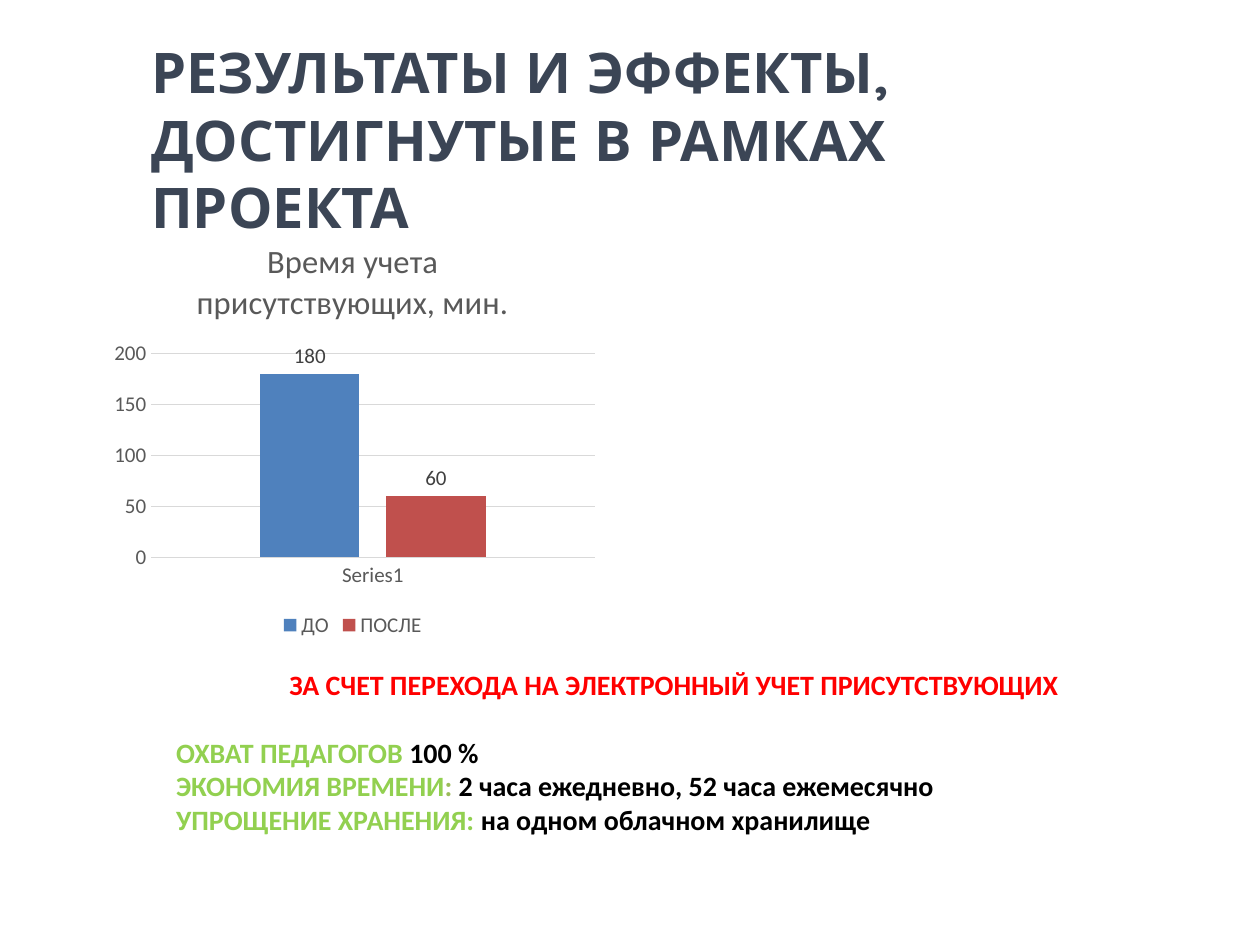
from lxml import etree
from pptx import Presentation
from pptx.chart.data import CategoryChartData
from pptx.dml.color import RGBColor
from pptx.enum.chart import XL_CHART_TYPE, XL_LABEL_POSITION, XL_LEGEND_POSITION, XL_TICK_MARK
from pptx.enum.text import PP_ALIGN
from pptx.oxml.ns import qn
from pptx.util import Inches, Pt

COLUMN_CLUSTERED = XL_CHART_TYPE.COLUMN_CLUSTERED
OUTSIDE_END = XL_LABEL_POSITION.OUTSIDE_END
BOTTOM = XL_LEGEND_POSITION.BOTTOM
NO_TICK = XL_TICK_MARK.NONE
CENTER, JUSTIFY = PP_ALIGN.CENTER, PP_ALIGN.JUSTIFY

WIDTH, HEIGHT = Inches(10), Inches(7.5)
BODY_FONT, TITLE_FONT = "Calibri", "Quicksand"
COLORS = {
    "title": "3B4555", "accent": "FF0000", "label": "92D050", "colon": "9BBB59",
    "text": "000000", "axis": "595959", "data_label": "404040", "grid": "D9D9D9",
    "before": "4F81BD", "after": "C0504D",
}
SERIES = [("ДО", 180, "before"), ("ПОСЛЕ", 60, "after")]
PLOT_LAYOUT = {"x": 0.1, "y": 0.32, "w": 0.88, "h": 0.48}
HEADLINE = "ЗА СЧЕТ ПЕРЕХОДА НА ЭЛЕКТРОННЫЙ УЧЕТ ПРИСУТСТВУЮЩИХ"
EFFECTS = [
    [("ОХВАТ ПЕДАГОГОВ", "label"), (" 100 %", "text")],
    [("ЭКОНОМИЯ ВРЕМЕНИ", "label"), (": ", "colon"),
     ("2 часа ежедневно, 52 часа ежемесячно", "text")],
    [("УПРОЩЕНИЕ ХРАНЕНИЯ: ", "label"), ("на одном облачном хранилище", "text")],
]


def share_box(left, top, width, height):
    """Turn shares of the slide's size into lengths."""
    return (round(left * WIDTH), round(top * HEIGHT),
            round(width * WIDTH), round(height * HEIGHT))


def rgb(name):
    return RGBColor.from_string(COLORS[name])


def style_font(font, size, color=None, name=BODY_FONT, bold=False):
    font.size, font.name, font.bold = Pt(size), name, bold
    if color:
        font.color.rgb = rgb(color)


def add_title(slide, box):
    frame = slide.shapes.add_textbox(*box).text_frame
    frame.word_wrap = True
    frame.margin_left = frame.margin_top = frame.margin_right = frame.margin_bottom = 0
    paragraph = frame.paragraphs[0]
    paragraph.text = "РЕЗУЛЬТАТЫ И ЭФФЕКТЫ,\vДОСТИГНУТЫЕ В РАМКАХ ПРОЕКТА"
    style_font(paragraph.font, 32, "title", TITLE_FONT, True)


def set_plot_layout(chart):
    """Fix the inner plot area as shares of the chart."""
    plot_area = chart.plots[0]._element.getparent()
    for old_layout in plot_area.findall(qn("c:layout")):
        plot_area.remove(old_layout)
    layout = etree.Element(qn("c:layout"))
    manual = etree.SubElement(layout, qn("c:manualLayout"))
    settings = {"layoutTarget": "inner", "xMode": "edge", "yMode": "edge", **PLOT_LAYOUT}
    for tag, value in settings.items():
        etree.SubElement(manual, qn(f"c:{tag}")).set("val", str(value))
    plot_area.insert(0, layout)


def style_axes(chart):
    category_axis, value_axis = chart.category_axis, chart.value_axis
    for axis in (category_axis, value_axis):
        axis.major_tick_mark = axis.minor_tick_mark = NO_TICK
        style_font(axis.tick_labels.font, 12, "axis")
    value_axis.minimum_scale, value_axis.maximum_scale = 0, 200
    value_axis.major_unit = 50
    value_axis.format.line.fill.background()
    for line in (category_axis.format.line, value_axis.major_gridlines.format.line):
        line.color.rgb = rgb("grid")
        line.width = Pt(0.75)


def add_time_chart(slide, box):
    data = CategoryChartData()
    data.categories = ["Series1"]
    for name, minutes, _ in SERIES:
        data.add_series(name, [minutes])
    chart = slide.shapes.add_chart(COLUMN_CLUSTERED, *box, data).chart
    style_font(chart.font, 10, "text")

    chart.has_title = True
    chart.chart_title.include_in_layout = False
    paragraph = chart.chart_title.text_frame.paragraphs[0]
    paragraph.text = "Время учета присутствующих, мин."
    style_font(paragraph.font, 18.6, "axis")

    chart.has_legend = True
    chart.legend.position = BOTTOM
    chart.legend.include_in_layout = False
    style_font(chart.legend.font, 12, "axis")

    plot = chart.plots[0]
    plot.gap_width, plot.overlap, plot.vary_by_categories = 219, -27, False
    for series, (_, _, color) in zip(plot.series, SERIES):
        series.format.fill.solid()
        series.format.fill.fore_color.rgb = rgb(color)
        labels = series.data_labels
        labels.show_value = True
        labels.position = OUTSIDE_END
        style_font(labels.font, 12, "data_label")
    style_axes(chart)
    set_plot_layout(chart)


def add_effects(slide, box):
    frame = slide.shapes.add_textbox(*box).text_frame
    frame.word_wrap = True
    headline = frame.paragraphs[0]
    headline.text = HEADLINE
    headline.alignment = CENTER
    style_font(headline.font, 16, "accent", bold=True)
    for index, parts in enumerate(EFFECTS):
        paragraph = frame.add_paragraph()
        paragraph.alignment = JUSTIFY
        if index == 0:
            paragraph.space_before = Pt(19.5)
        style_font(paragraph.font, 16, bold=True)
        for text, color in parts:
            run = paragraph.add_run()
            run.text = text
            run.font.color.rgb = rgb(color)


def main():
    presentation = Presentation()
    presentation.slide_width, presentation.slide_height = WIDTH, HEIGHT
    slide = presentation.slides.add_slide(presentation.slide_layouts[6])
    add_effects(slide, share_box(0.13, 0.7, 0.81, 0.19))
    add_time_chart(slide, share_box(0.08, 0.23, 0.4, 0.45))
    add_title(slide, share_box(0.12, 0.04, 0.68, 0.14))
    presentation.save("out.pptx")


if __name__ == "__main__":
    main()
